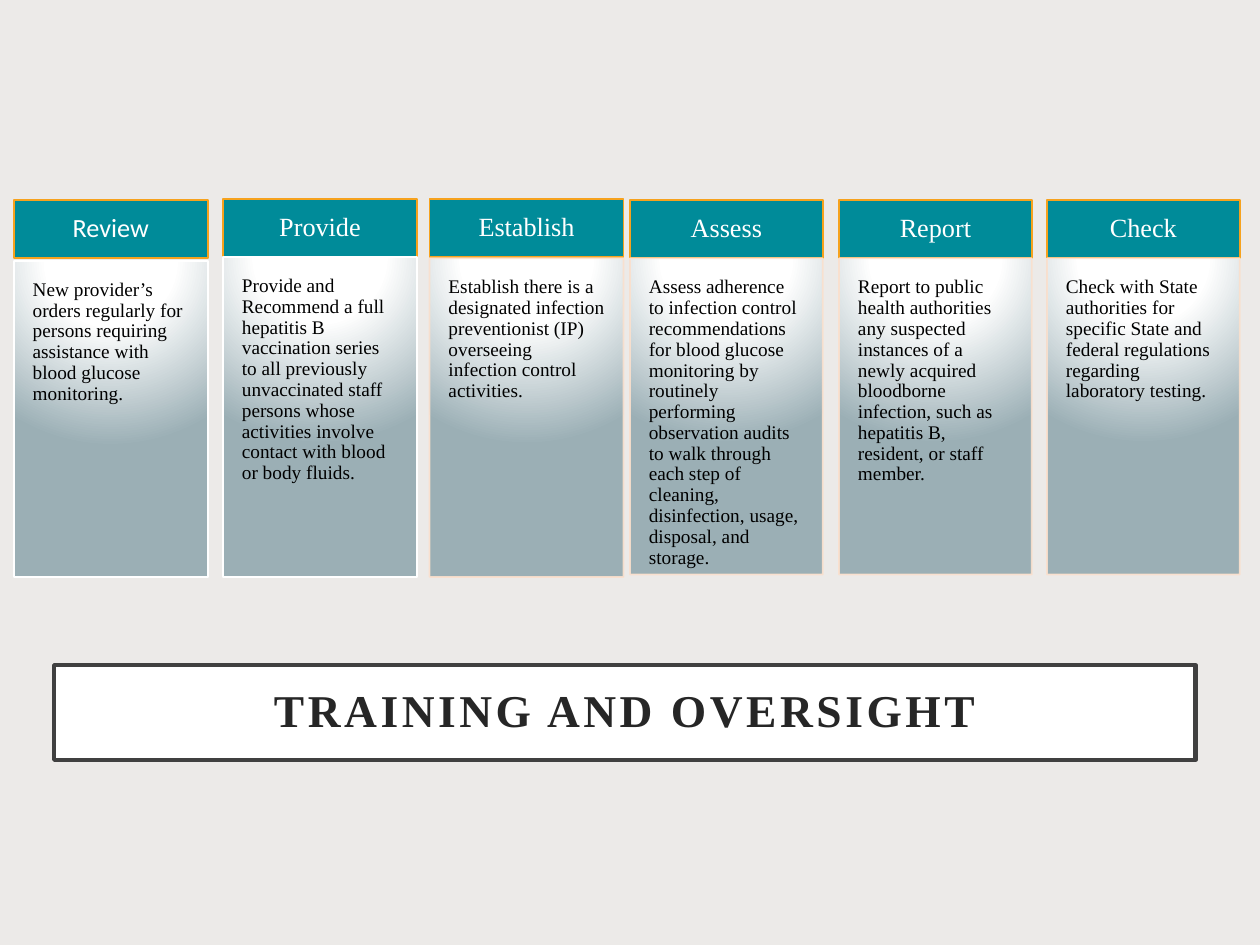
from lxml import etree
from pptx import Presentation
from pptx.dml.color import RGBColor
from pptx.enum.shapes import MSO_SHAPE
from pptx.enum.text import MSO_ANCHOR, MSO_AUTO_SIZE, PP_ALIGN
from pptx.oxml import parse_xml
from pptx.oxml.ns import qn
from pptx.util import Inches, Pt

RECTANGLE = MSO_SHAPE.RECTANGLE
TOP, MIDDLE = MSO_ANCHOR.TOP, MSO_ANCHOR.MIDDLE
LEFT, CENTER = PP_ALIGN.LEFT, PP_ALIGN.CENTER
NO_AUTOFIT = MSO_AUTO_SIZE.NONE

SERIF, SANS = "Times New Roman", "Calibri"
TEAL, ORANGE, WHITE, PEACH, STEEL = "008B99", "F6A21D", "FFFFFF", "FBE0CD", "9BAFB5"
TITLE = "TRAINING AND OVERSIGHT"
HEADER_HEIGHT = 0.46

# heading, heading font, body, body outline
CARDS = [
    ("Review", SANS, "New provider’s orders regularly for persons requiring assistance "
     "with blood glucose monitoring.", WHITE),
    ("Provide", SERIF, "Provide and Recommend a full hepatitis B vaccination series to all "
     "previously unvaccinated staff persons whose activities involve contact with blood "
     "or body fluids.", WHITE),
    ("Establish", SERIF, "Establish there is a designated infection preventionist (IP) "
     "overseeing infection control activities.", PEACH),
    ("Assess", SERIF, "Assess adherence to infection control recommendations for blood "
     "glucose monitoring by routinely performing observation audits to walk through each "
     "step of cleaning, disinfection, usage, disposal, and storage.", PEACH),
    ("Report", SERIF, "Report to public health authorities any suspected instances of a "
     "newly acquired bloodborne infection, such as hepatitis B, resident, or staff "
     "member.", PEACH),
    ("Check", SERIF, "Check with State authorities for specific State and federal "
     "regulations regarding laboratory testing.", PEACH),
]
# left, header top, body top, bottom, width
PLACES = [
    (0.11, 1.59, 2.07, 4.58, 1.54),
    (1.77, 1.58, 2.04, 4.58, 1.54),
    (3.41, 1.58, 2.05, 4.58, 1.54),
] + [(left, 1.59, 2.05, 4.56, 1.53) for left in (5, 6.66, 8.31)]

GRADIENT = (
    '<a:gradFill xmlns:a="http://schemas.openxmlformats.org/drawingml/2006/main" '
    'rotWithShape="1"><a:gsLst>'
    f'<a:gs pos="0"><a:srgbClr val="{WHITE}"/></a:gs>'
    f'<a:gs pos="35000"><a:srgbClr val="{WHITE}"/></a:gs>'
    f'<a:gs pos="100000"><a:srgbClr val="{STEEL}"/></a:gs></a:gsLst>'
    '<a:path path="circle"><a:fillToRect l="50000" t="-80000" r="50000" b="180000"/>'
    '</a:path></a:gradFill>'
)


def color(value):
    """Turn a hex string into a colour."""
    return RGBColor.from_string(value)


def paint(shape, fill, line, width):
    """Give a shape a solid fill and an outline."""
    shape.fill.solid()
    shape.fill.fore_color.rgb = color(fill)
    shape.line.color.rgb = color(line)
    shape.line.width = Pt(width)


def write(shape, text, font, size, ink, align, anchor, inset_x, inset_y):
    """Fill a shape with one formatted paragraph and return it."""
    frame = shape.text_frame
    frame.word_wrap = True
    frame.auto_size = NO_AUTOFIT
    frame.vertical_anchor = anchor
    frame.margin_left = frame.margin_right = Inches(inset_x)
    frame.margin_top = frame.margin_bottom = Inches(inset_y)
    frame.text = text
    para = frame.paragraphs[0]
    para.alignment = align
    para.line_spacing = 0.9
    para.font.name = font
    para.font.size = Pt(size)
    para.font.color.rgb = color(ink)
    return para


def add_box(page, left, top, width, height, fill, line):
    """Add an outlined rectangle without shadow."""
    box = page.shapes.add_shape(RECTANGLE, *map(Inches, (left, top, width, height)))
    box.shadow.inherit = False
    paint(box, fill, line, 1)
    return box


def add_card(page, card, place):
    """Add one column with its heading and its shaded body."""
    heading, font, text, outline = card
    left, top, body_top, bottom, width = place
    header = add_box(page, left, top, width, HEADER_HEIGHT, TEAL, ORANGE)
    write(header, heading, font, 15, WHITE, CENTER, MIDDLE, 0.12, 0.12)
    body = add_box(page, left, body_top, width, bottom - body_top, WHITE, outline)
    properties = body.element.spPr
    properties.replace(properties.find(qn("a:solidFill")), parse_xml(GRADIENT))
    if outline == PEACH:
        shade = properties.find(qn("a:ln")).find(".//" + qn("a:srgbClr"))
        etree.SubElement(shade, qn("a:alpha"), val="90000")
    write(body, text, SERIF, 11, "000000", LEFT, TOP, 0.15, 0.15)


def add_title(page):
    """Place and format the title banner."""
    title = page.shapes.title
    title.left, title.top, title.width, title.height = map(Inches, (0.43, 5.28, 9.06, 0.75))
    paint(title, WHITE, "404040", 2.5)
    para = write(title, TITLE, SERIF, 26, "262626", CENTER, MIDDLE, 0.07, 0.04)
    para.font.bold = True
    para.runs[0].font.bold = True
    para.runs[0].font._element.set("spc", "200")


def main():
    """Build the slide and save it."""
    deck = Presentation()
    deck.slide_width, deck.slide_height = Inches(10), Inches(7.5)
    page = deck.slides.add_slide(deck.slide_layouts[5])
    page.background.fill.solid()
    page.background.fill.fore_color.rgb = color("ECEAE8")
    add_title(page)
    for card, place in zip(CARDS, PLACES):
        add_card(page, card, place)
    deck.save("out.pptx")


if __name__ == "__main__":
    main()
